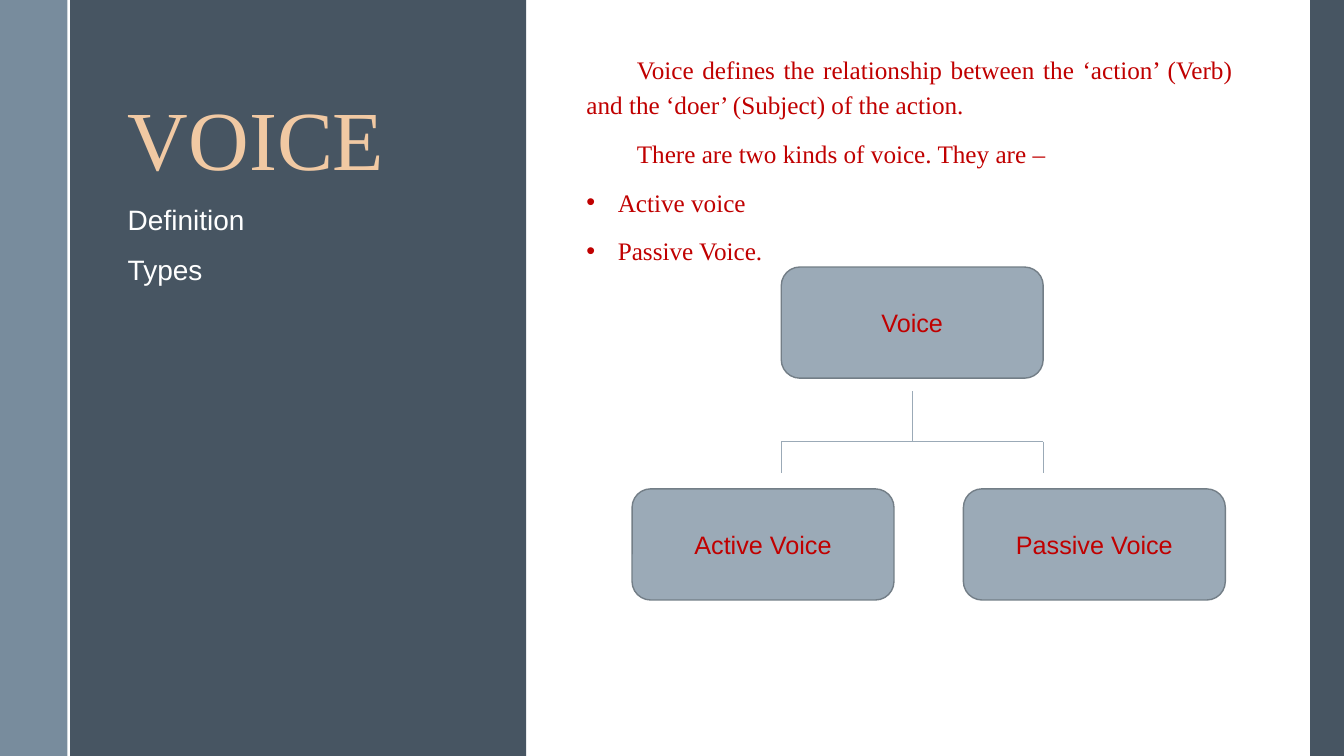
import pptx
import pptx.dml.color
import pptx.enum.shapes
import pptx.enum.text
import pptx.oxml.ns
import pptx.util
import lxml.etree

Cm = pptx.util.Cm
Pt = pptx.util.Pt
ALIGN = pptx.enum.text.PP_ALIGN
ANCHOR = pptx.enum.text.MSO_ANCHOR
SHAPE = pptx.enum.shapes.MSO_SHAPE

THEME = {
    "panel": "475562", "strip": "6A8093", "white": "FFFFFF", "title": "F1C9A3",
    "accent": "C00000", "box": "9BAAB7", "outline": "737E87",
    "serif": "Times New Roman", "sans": "Arial",
    "title_size": 60, "outline_size": 20, "text_size": 18,
}

TITLE = ["VOICE"]
TOPICS = ["Definition", "Types"]
DEFINITION = [
    ("Voice defines the relationship between the ‘action’ (Verb) and the ‘doer’ (Subject) of the action.", False),
    ("There are two kinds of voice. They are –", False),
    ("Active voice", True),
    ("Passive Voice.", True),
]
ROOT = ("Voice", 19.69, 6.73)
KINDS = [("Active Voice", 15.93, 12.32), ("Passive Voice", 24.28, 12.32)]

WIDTH, HEIGHT = 33.87, 19.05
BANDS = [(1.73, 11.53, "panel", 100), (0, 1.7, "strip", 90), (33.02, 0.85, "panel", 100)]
BOX_WIDTH, BOX_HEIGHT = 6.6, 2.8
STEM_TOP, BRANCH_TOP, BRANCH_BOTTOM = 9.86, 11.13, 11.93
FIRST_LINE = 1.27
BULLET_INDENT = 0.79


def color(name):
    return pptx.dml.color.RGBColor.from_string(THEME[name])


def apply(target, values):
    for name, value in values.items():
        setattr(target, name, value)


def child(parent, tag, **attributes):
    return lxml.etree.SubElement(parent, pptx.oxml.ns.qn(tag), attributes)


def add_block(slide, kind, left, top, width, height, fill, opacity=100, line=None):
    shape = slide.shapes.add_shape(kind, Cm(left), Cm(top), Cm(width), Cm(height))
    shape.shadow.inherit = False
    shape.fill.solid()
    shape.fill.fore_color.rgb = color(fill)
    if opacity < 100:
        rgb = shape.fill._xPr.find(".//" + pptx.oxml.ns.qn("a:srgbClr"))
        child(rgb, "a:alpha", val=str(opacity * 1000))
    if line:
        shape.line.color.rgb = color(line)
        shape.line.width = Pt(1)
    else:
        shape.line.fill.background()
    return shape


def add_line(slide, start, end, line, width):
    points = [Cm(value) for value in (*start, *end)]
    connector = slide.shapes.add_connector(pptx.enum.shapes.MSO_CONNECTOR.STRAIGHT, *points)
    connector.line.color.rgb = color(line)
    connector.line.width = Pt(width)
    child(connector._element.spPr, "a:effectLst")


def set_indent(paragraph, bulleted):
    properties = paragraph._p.get_or_add_pPr()
    margin, indent = (BULLET_INDENT, -BULLET_INDENT) if bulleted else (0, FIRST_LINE)
    properties.set("marL", str(int(Cm(margin))))
    properties.set("indent", str(int(Cm(indent))))
    if bulleted:
        child(properties, "a:buFont", typeface=THEME["sans"])
        child(properties, "a:buChar", char="•")


def write(shape, lines, font, size, ink, spacing, anchor=ANCHOR.TOP, before=0):
    frame = shape.text_frame
    apply(frame, {"word_wrap": True, "vertical_anchor": anchor})
    for index, line in enumerate(lines):
        text, bulleted = line if isinstance(line, tuple) else (line, None)
        paragraph = frame.paragraphs[0] if index == 0 else frame.add_paragraph()
        paragraph.text = text
        apply(paragraph, spacing)
        if index and before:
            paragraph.space_before = Pt(before)
        if bulleted is not None:
            set_indent(paragraph, bulleted)
        apply(paragraph.font, {"name": THEME[font], "size": Pt(THEME[size])})
        paragraph.font.color.rgb = color(ink)


def add_text(slide, left, top, width, height, *text, **options):
    shape = slide.shapes.add_textbox(Cm(left), Cm(top), Cm(width), Cm(height))
    write(shape, *text, **options)


def add_node(slide, label, left, top):
    shape = add_block(slide, SHAPE.ROUNDED_RECTANGLE, left, top, BOX_WIDTH, BOX_HEIGHT,
                      "box", line="outline")
    write(shape, [label], "sans", "text_size", "accent",
          {"alignment": ALIGN.CENTER}, anchor=ANCHOR.MIDDLE)


def main():
    presentation = pptx.Presentation()
    apply(presentation, {"slide_width": Cm(WIDTH), "slide_height": Cm(HEIGHT)})
    slide = presentation.slides.add_slide(presentation.slide_layouts[6])

    for left, width, fill, opacity in BANDS:
        add_block(slide, SHAPE.RECTANGLE, left, 0, width, HEIGHT, fill, opacity)
    add_line(slide, (1.73, 0), (1.73, HEIGHT), "white", 1.5)

    tight = {"alignment": ALIGN.LEFT, "line_spacing": 0.9}
    add_text(slide, 2.97, 1.07, 9.14, 3.81, TITLE, "serif", "title_size", "title",
             tight, anchor=ANCHOR.BOTTOM)
    add_text(slide, 2.97, 5.08, 9.14, 12.07, TOPICS, "sans", "outline_size", "white",
             tight, before=14)
    add_text(slide, 14.53, 1.14, 16.79, 9.19, DEFINITION, "serif", "text_size", "accent",
             {"alignment": ALIGN.JUSTIFY, "line_spacing": 1.15, "space_after": Pt(10)})

    for node in [*KINDS, ROOT]:
        add_node(slide, *node)

    left = ROOT[1]
    right = left + BOX_WIDTH
    middle = left + BOX_WIDTH / 2
    for start, end in [
        ((middle, STEM_TOP), (middle, BRANCH_TOP)),
        ((left, BRANCH_TOP), (right, BRANCH_TOP)),
        ((left, BRANCH_TOP), (left, BRANCH_BOTTOM)),
        ((right, BRANCH_TOP), (right, BRANCH_BOTTOM)),
    ]:
        add_line(slide, start, end, "box", 0.5)

    presentation.save("out.pptx")


if __name__ == "__main__":
    main()
